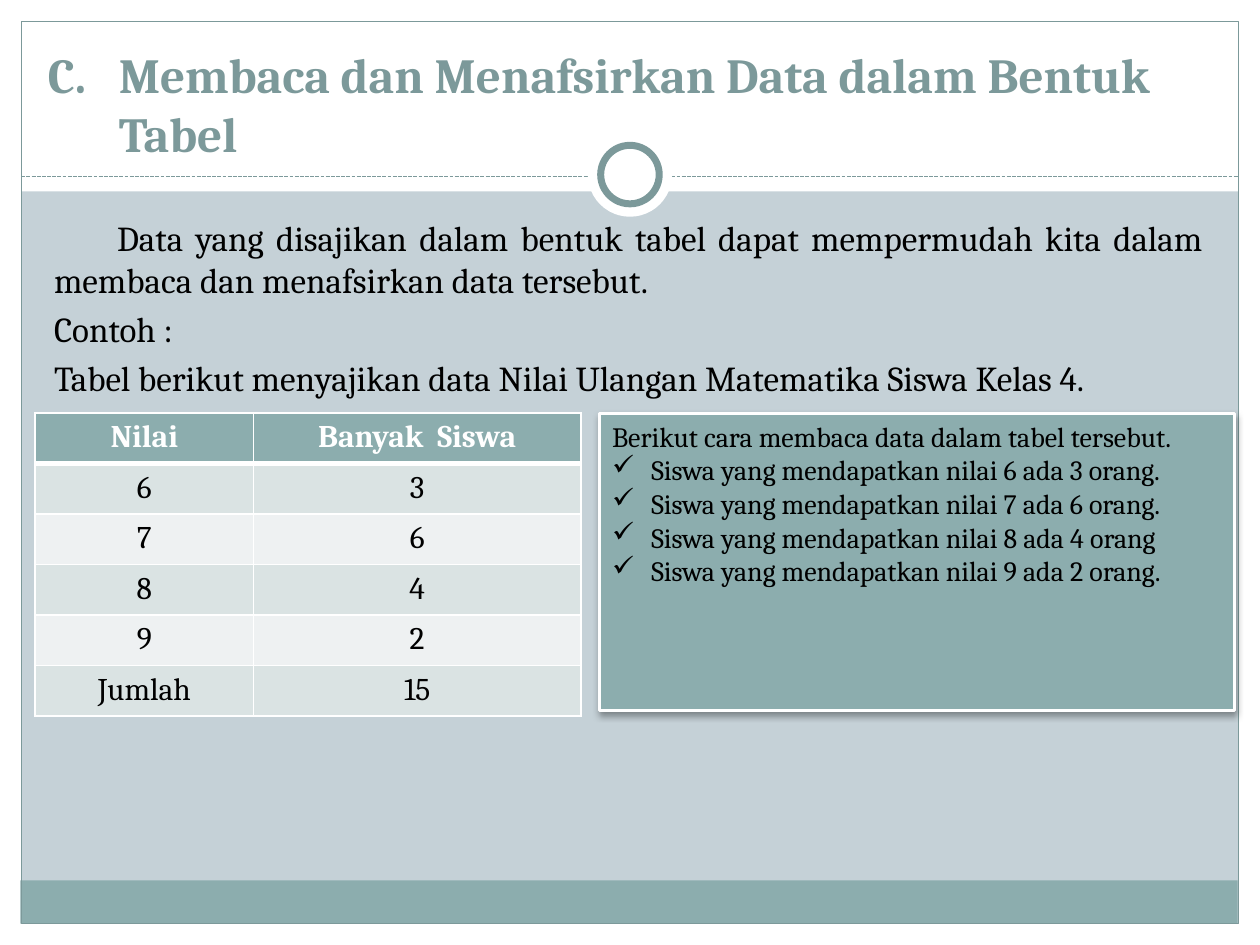
from pptx import Presentation
from pptx import util as u
from pptx.dml import color
from pptx.enum import dml, shapes, text
from pptx.oxml import ns, parse_xml

WHITE, BLACK = "FFFFFF", "000000"
TEAL, DARK_TEAL, MIST = "8CADAE", "7C999A", "C5D1D7"
BANDS = "DAE3E3", "EEF1F2"
A = ns.nsdecls("a")


def rgb(value):
    return color.RGBColor.from_string(value)


def apply(target, values):
    for name, value in values.items():
        setattr(target, name, value)


class SlideBuilder:
    font = "Cambria"

    def __init__(self, slide):
        self.slide = slide
        slide.background.fill.solid()
        slide.background.fill.fore_color.rgb = rgb(MIST)

    def add_words(self, paragraph, words, size, ink=BLACK, bold=False,
                  **layout):
        run = paragraph.add_run()
        run.text = words
        apply(run.font, {"name": self.font, "size": u.Pt(size), "bold": bold})
        run.font.color.rgb = rgb(ink)
        apply(paragraph, layout)

    def bullet(self, paragraph, indent, marker):
        """Add a hanging marker, given as a DrawingML bullet tag."""
        properties = paragraph._p.get_or_add_pPr()
        properties.set("marL", str(u.Cm(indent)))
        properties.set("indent", str(-u.Cm(indent)))
        properties.append(parse_xml(f"<a:{marker} {A}/>"))

    def shape(self, kind, box, fill=None, line=None, width=0.75):
        item = self.slide.shapes.add_shape(kind, *map(u.Cm, box))
        item.shadow.inherit = False
        if fill:
            item.fill.solid()
            item.fill.fore_color.rgb = rgb(fill)
        else:
            item.fill.background()
        if line:
            item.line.color.rgb = rgb(line)
            item.line.width = u.Pt(width)
        else:
            item.line.fill.background()
        return item

    def dashed_rule(self, left, right, y):
        rule = self.slide.shapes.add_connector(
            shapes.MSO_CONNECTOR.STRAIGHT, *map(u.Cm, (left, y, right, y)))
        rule.line.color.rgb = rgb(DARK_TEAL)
        apply(rule.line, {"width": u.Pt(0.75),
                          "dash_style": dml.MSO_LINE.SQUARE_DOT})
        rule._element.spPr.append(parse_xml(f"<a:effectLst {A}/>"))

    def title(self, box, words):
        heading = self.slide.shapes.title
        apply(heading, dict(zip(("left", "top", "width", "height"),
                                map(u.Cm, box))))
        heading.element.getparent().append(heading.element)  # bring to front
        apply(heading.text_frame, {
            "word_wrap": True, "auto_size": text.MSO_AUTO_SIZE.NONE,
            "vertical_anchor": text.MSO_ANCHOR.MIDDLE})
        paragraph = heading.text_frame.paragraphs[0]
        self.add_words(paragraph, words, 28, DARK_TEAL, True,
                       alignment=text.PP_ALIGN.LEFT)
        self.bullet(paragraph, 1.43,
                    'buAutoNum type="alphaUcPeriod" startAt="3"')

    def body(self, box, lines):
        frame = self.slide.shapes.add_textbox(*map(u.Cm, box)).text_frame
        frame.word_wrap = True
        for i, (words, alignment) in enumerate(lines):
            paragraph = frame.add_paragraph() if i else frame.paragraphs[0]
            self.add_words(paragraph, words, 20, alignment=alignment,
                           space_before=u.Pt(4))

    def borders(self, cell, **widths):
        properties = cell._tc.get_or_add_tcPr()
        for side in "LRTB":
            width = u.Pt(widths.get(side, 1))
            properties.append(parse_xml(
                f'<a:ln{side} {A} w="{width}"><a:solidFill>'
                f'<a:srgbClr val="{WHITE}"/></a:solidFill></a:ln{side}>'))

    def table(self, left, top, columns, row_height, rows):
        grid = self.slide.shapes.add_table(
            len(rows), len(columns), u.Cm(left), u.Cm(top),
            u.Cm(sum(columns)), u.Cm(row_height * len(rows))).table
        for column, width in zip(grid.columns, columns):
            column.width = u.Cm(width)
        for r, row in enumerate(rows):
            header = r == 0
            for c, words in enumerate(row):
                cell = grid.cell(r, c)
                self.borders(cell, B=3 if header else 1, T=3 if r == 1 else 1)
                cell.fill.solid()
                cell.fill.fore_color.rgb = rgb(
                    TEAL if header else BANDS[(r - 1) % 2])
                self.add_words(cell.text_frame.paragraphs[0], words, 18,
                               WHITE if header else BLACK, header,
                               alignment=text.PP_ALIGN.CENTER)

    def reading_panel(self, box, intro, readings):
        panel = self.shape(shapes.MSO_SHAPE.PENTAGON, box, TEAL, WHITE, 1.57)
        panel.adjustments[0] = 0
        panel._element.spPr.find(ns.qn("a:effectLst")).append(parse_xml(
            f'<a:outerShdw {A} blurRad="{u.Pt(4)}" dist="{u.Pt(2)}" '
            f'dir="5400000" rotWithShape="0"><a:srgbClr val="{BLACK}">'
            '<a:alpha val="35000"/></a:srgbClr></a:outerShdw>'))
        frame = panel.text_frame
        apply(frame, {"word_wrap": True,
                      "vertical_anchor": text.MSO_ANCHOR.TOP})
        left = text.PP_ALIGN.LEFT
        self.add_words(frame.paragraphs[0], intro, 16, alignment=left)
        for reading in readings:
            paragraph = frame.add_paragraph()
            self.add_words(paragraph, reading, 16, alignment=left)
            self.bullet(paragraph, 0.79, 'buChar char="✓"')


def draw_frame(builder):
    rectangle, oval = shapes.MSO_SHAPE.RECTANGLE, shapes.MSO_SHAPE.OVAL
    for margin in ((0, 18.62, 25.4, 0.43), (0, 0, 25.4, 3.86),
                   (0, 0, 0.43, 19.05), (24.97, 0, 0.43, 19.05)):
        builder.shape(rectangle, margin, WHITE)
    builder.shape(rectangle, (0.41, 17.75, 24.54, 0.87), TEAL)
    builder.shape(rectangle, (0.43, 0.43, 24.54, 18.19), line=DARK_TEAL)
    builder.dashed_rule(0.43, 24.97, 3.56)
    builder.shape(oval, (11.85, 2.67, 1.7, 1.7), WHITE)
    builder.shape(oval, (12.11, 2.93, 1.18, 1.18), WHITE, DARK_TEAL, 4)


def main():
    deck = Presentation()
    apply(deck, {"slide_width": u.Cm(25.4), "slide_height": u.Cm(19.05)})
    builder = SlideBuilder(deck.slides.add_slide(deck.slide_layouts[5]))
    draw_frame(builder)
    builder.title((0.71, 0.64, 24, 2.9),
                  "Membaca dan Menafsirkan Data dalam Bentuk Tabel")
    justify, left = text.PP_ALIGN.JUSTIFY, text.PP_ALIGN.LEFT
    builder.body((0.84, 4.24, 23.67, 4.67), [
        ("\tData yang disajikan dalam bentuk tabel dapat mempermudah kita "
         "dalam membaca dan menafsirkan data tersebut.", justify),
        ("Contoh :", left),
        ("Tabel berikut menyajikan data Nilai Ulangan Matematika "
         "Siswa Kelas 4.", left)])
    builder.table(0.71, 8.33, (4.4, 6.6), 0.99, [
        ("Nilai", "Banyak  Siswa"), ("6", "3"), ("7", "6"), ("8", "4"),
        ("9", "2"), ("Jumlah", "15")])
    builder.reading_panel(
        (12.09, 8.33, 12.8, 6),
        "Berikut cara membaca data dalam tabel tersebut.",
        ["Siswa yang mendapatkan nilai 6 ada 3 orang.",
         "Siswa yang mendapatkan nilai 7 ada 6 orang.",
         "Siswa yang mendapatkan nilai 8 ada 4 orang",
         "Siswa yang mendapatkan nilai 9 ada 2 orang."])
    deck.save("out.pptx")


if __name__ == "__main__":
    main()
